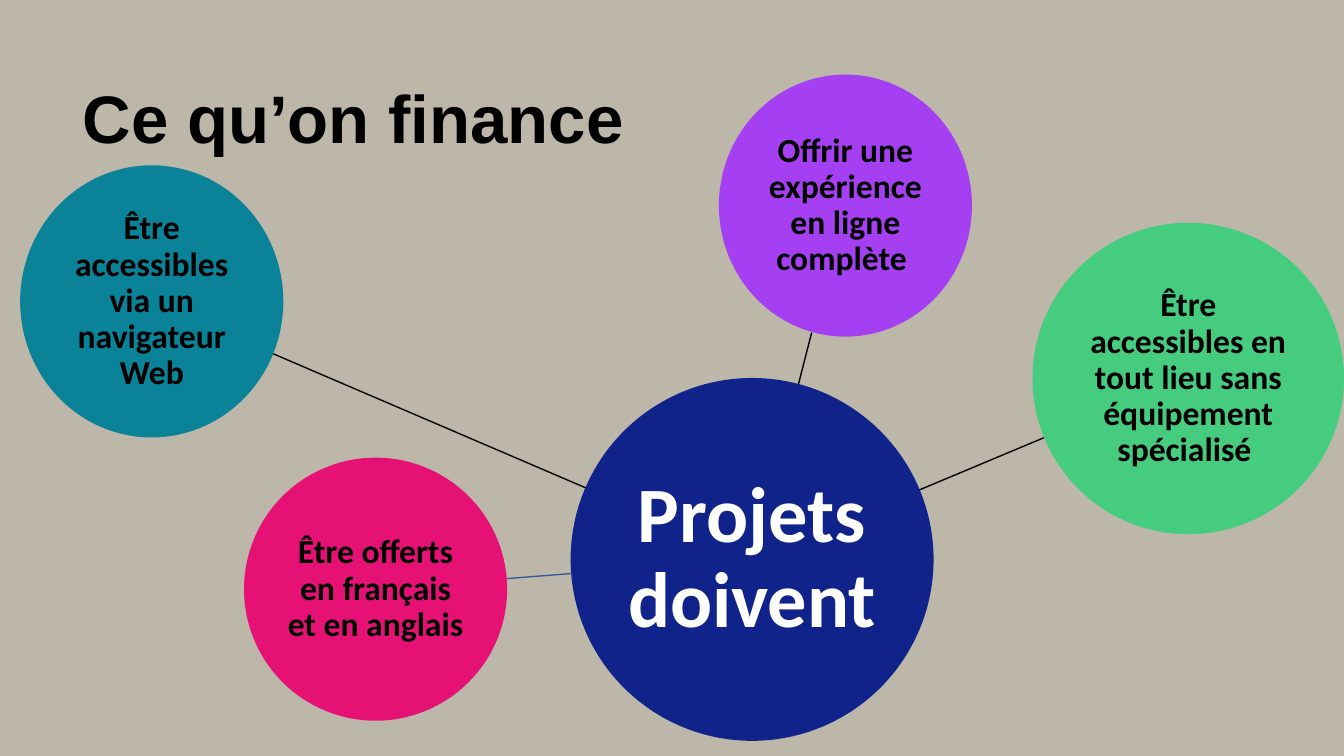
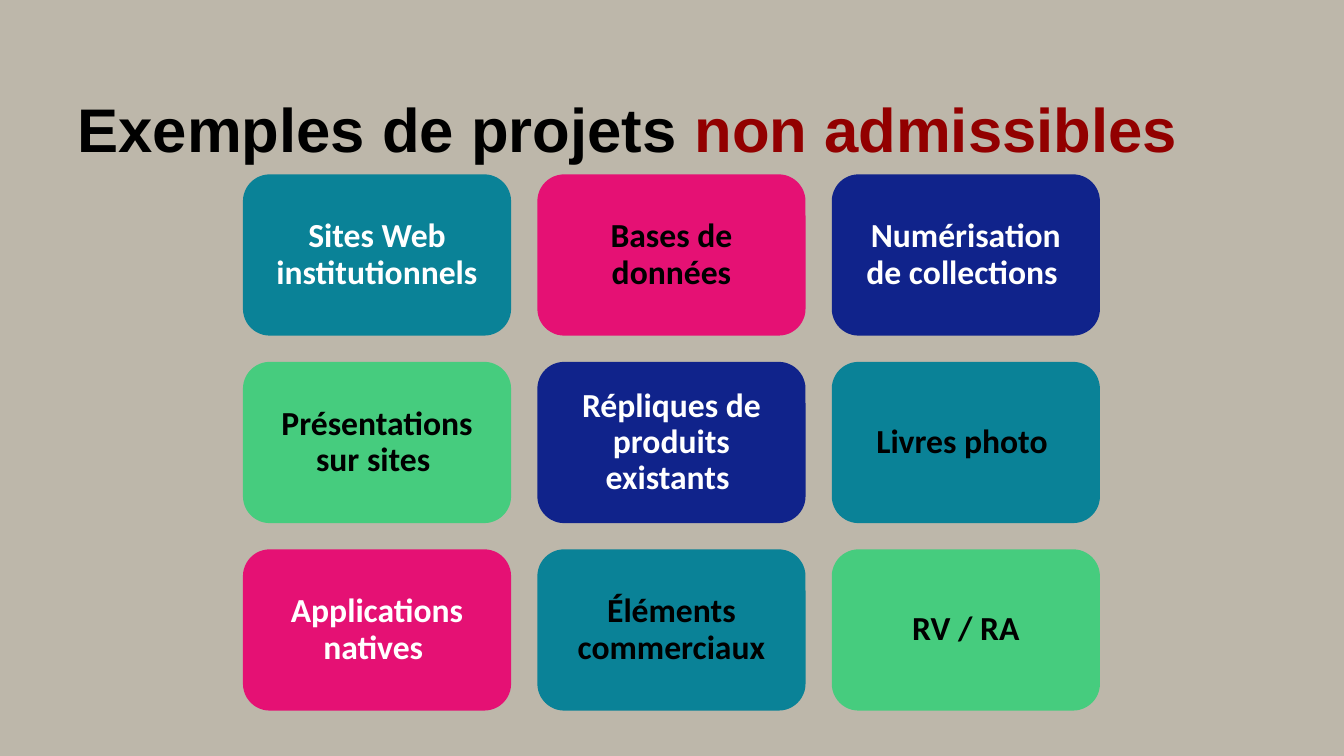
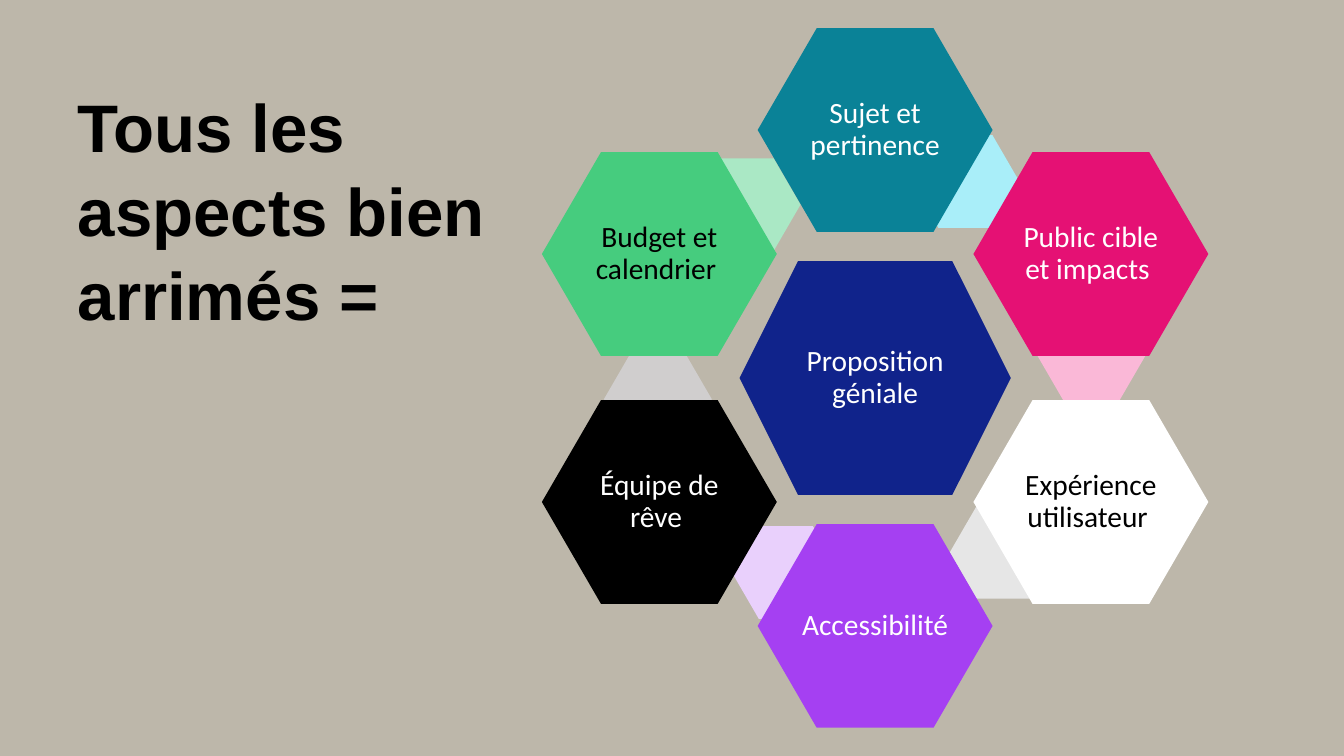
from lxml import etree
from pptx import Presentation
from pptx import util as u
from pptx.dml.color import RGBColor
from pptx.enum import shapes, text
from pptx.oxml.ns import qn

# Shared palette
SAND = RGBColor(0xBD, 0xB7, 0xAA)
BLACK = RGBColor(0x00, 0x00, 0x00)
WHITE = RGBColor(0xFF, 0xFF, 0xFF)
NAVY = RGBColor(0x10, 0x23, 0x8B)
TEAL = RGBColor(0x0A, 0x82, 0x97)
PURPLE = RGBColor(0xA5, 0x40, 0xF2)
GREEN = RGBColor(0x46, 0xCC, 0x7E)
PINK = RGBColor(0xE5, 0x11, 0x74)
BLUE = RGBColor(0x36, 0x5B, 0x9D)
DARK_RED = RGBColor(0x92, 0x00, 0x00)
PALE_GREEN = RGBColor(0xAA, 0xE8, 0xC5)
PALE_TEAL = RGBColor(0xA9, 0xEE, 0xF9)
PALE_PINK = RGBColor(0xFA, 0xB8, 0xD7)
PALE_PURPLE = RGBColor(0xE9, 0xD0, 0xFC)
PALE_GREY = RGBColor(0xE6, 0xE6, 0xE6)
GREY = RGBColor(0xD0, 0xCE, 0xCE)

ELLIPSE = shapes.MSO_SHAPE.OVAL
CARD = shapes.MSO_SHAPE.ROUNDED_RECTANGLE
HEXAGON = shapes.MSO_SHAPE.HEXAGON

presentation = Presentation()
presentation.slide_width = u.Inches(13.33)
presentation.slide_height = u.Inches(7.5)
background = presentation.slide_master.background.fill
background.solid()
background.fore_color.rgb = SAND


def add_titled_slide(title_text, box, size):
    """Add a slide whose bold title sits in box (left, top, width, height)."""
    slide = presentation.slides.add_slide(presentation.slide_layouts[5])
    title = slide.shapes.title
    title.left, title.top, title.width, title.height = map(u.Inches, box)
    frame = title.text_frame
    frame.margin_left = frame.margin_top = frame.margin_right = 0
    frame.margin_bottom = u.Inches(0.28)
    frame.vertical_anchor = text.MSO_ANCHOR.TOP
    frame.auto_size = text.MSO_AUTO_SIZE.NONE
    frame.word_wrap = True
    paragraph = frame.paragraphs[0]
    paragraph.add_run().text = title_text
    paragraph.alignment = text.PP_ALIGN.LEFT
    paragraph.line_spacing = u.Pt(60)
    paragraph.font.name = "Arial"
    paragraph.font.size = u.Pt(size)
    paragraph.font.bold = True
    paragraph.font.color.rgb = BLACK
    return slide


def add_panel(slide, kind, box, fill, caption="", color=BLACK, size=24, bold=True, inset=0.02):
    """Add a flat filled shape with a centred caption."""
    shape = slide.shapes.add_shape(kind, *map(u.Inches, box))
    shape.shadow.inherit = False
    shape.fill.solid()
    shape.fill.fore_color.rgb = fill
    shape.line.fill.background()
    if caption:
        frame = shape.text_frame
        frame.word_wrap = True
        frame.vertical_anchor = text.MSO_ANCHOR.MIDDLE
        frame.margin_left = frame.margin_right = u.Inches(inset)
        frame.margin_top = frame.margin_bottom = u.Inches(inset)
        paragraph = frame.paragraphs[0]
        paragraph.text = caption
        paragraph.alignment = text.PP_ALIGN.CENTER
        paragraph.line_spacing = 0.9
        paragraph.font.name = "Calibri"
        paragraph.font.size = u.Pt(size)
        paragraph.font.bold = bold
        paragraph.font.color.rgb = color
    return shape


# Slide 1: hub with four satellites
slide = add_titled_slide("Ce qu’on finance", (0.82, 0.72, 10.58, 1.14), 48)
add_panel(slide, ELLIPSE, (5.66, 3.75, 3.6, 3.6), NAVY, "Projets doivent ", WHITE, 56, inset=0.04)
satellites = [
    ((0.2, 1.64, 2.61, 2.7), TEAL, "Être accessibles via un navigateur Web",
     (5.81, 4.84, 2.71, 3.51), BLACK),
    ((7.13, 0.74, 2.51, 2.6), PURPLE, "Offrir une expérience en ligne complète ",
     (7.92, 3.81, 8.05, 3.3), BLACK),
    ((10.24, 2.21, 3.09, 3.09), GREEN,
     "Être accessibles en tout lieu sans équipement spécialisé ",
     (9.12, 4.86, 10.36, 4.34), BLACK),
    ((2.42, 4.54, 2.61, 2.61), PINK, "Être offerts en français et en anglais ",
     (5.67, 5.69, 5.03, 5.74), BLUE),
]
for box, fill, caption, ends, line_color in satellites:
    spoke = slide.shapes.add_connector(shapes.MSO_CONNECTOR.STRAIGHT, *map(u.Inches, ends))
    spoke.line.color.rgb = line_color
    spoke.line.width = u.Pt(1)
    etree.SubElement(spoke._element.spPr, qn("a:effectLst"))
    add_panel(slide, ELLIPSE, box, fill, caption)

# Slide 2: three by three cards
slide = add_titled_slide("Exemples de projets ", (0.77, 0.8, 11.4, 0.76), 44)
highlight = slide.shapes.title.text_frame.paragraphs[0].add_run()
highlight.text = "non admissibles"
highlight.font.color.rgb = DARK_RED

CARD_WIDTH, CARD_HEIGHT, CARD_GAP = 2.66, 1.6, 0.26
GRID_LEFT, GRID_TOP = 2.41, 1.73
cards = [
    ("Sites Web institutionnels", TEAL, WHITE),
    ("Bases de données", PINK, BLACK),
    ("Numérisation de collections ", NAVY, WHITE),
    ("Présentations sur sites ", GREEN, BLACK),
    ("Répliques de produits existants ", NAVY, WHITE),
    ("Livres photo ", TEAL, BLACK),
    ("Applications natives ", PINK, WHITE),
    ("Éléments commerciaux", TEAL, BLACK),
    ("RV / RA", GREEN, BLACK),
]
for index, (caption, fill, color) in enumerate(cards):
    row, column = divmod(index, 3)
    left = GRID_LEFT + column * (CARD_WIDTH + CARD_GAP)
    top = GRID_TOP + row * (CARD_HEIGHT + CARD_GAP)
    add_panel(slide, CARD, (left, top, CARD_WIDTH, CARD_HEIGHT), fill, caption, color, inset=0.1)

# Slide 3: ring of hexagons around the proposal
slide = add_titled_slide("Tous les aspects bien arrimés =", (0.77, 0.81, 4.38, 2.18), 48)
CENTER_X, CENTER_Y = 8.68, 3.75
COLUMN_STEP, ROW_STEP = 2.14, 1.23

# Pale links, placed by left and top, lie behind the ring
links = [
    (6.87, 1.57, PALE_GREEN), (9.04, 1.34, PALE_TEAL), (10.29, 3.07, PALE_PINK),
    (9.42, 5.02, PALE_GREY), (7.26, 5.22, PALE_PURPLE), (5.99, 3.5, GREY),
]
for left, top, fill in links:
    link = add_panel(slide, HEXAGON, (left, top, 1.07, 0.92), fill)
    link.adjustments[0] = 0.29

# Column and row offsets from the centre, with width, height and corner
RING = (2.33, 2.02, 0.29)
HUB = (2.69, 2.32, 0.25)
hexagons = [
    (0, 0, HUB, NAVY, "Proposition géniale", WHITE),
    (0, -2, RING, TEAL, "Sujet et pertinence", WHITE),
    (1, -1, RING, PINK, "Public cible et impacts ", WHITE),
    (1, 1, RING, WHITE, "Expérience utilisateur ", BLACK),
    (0, 2, RING, PURPLE, "Accessibilité", WHITE),
    (-1, 1, RING, BLACK, "Équipe de rêve ", WHITE),
    (-1, -1, RING, GREEN, "Budget et calendrier ", BLACK),
]
for column, row, (width, height, corner), fill, caption, color in hexagons:
    left = CENTER_X + column * COLUMN_STEP - width / 2
    top = CENTER_Y + row * ROW_STEP - height / 2
    hexagon = add_panel(slide, HEXAGON, (left, top, width, height), fill, caption, color,
                        size=21, bold=False, inset=0.03)
    hexagon.adjustments[0] = corner

presentation.save("out.pptx")
